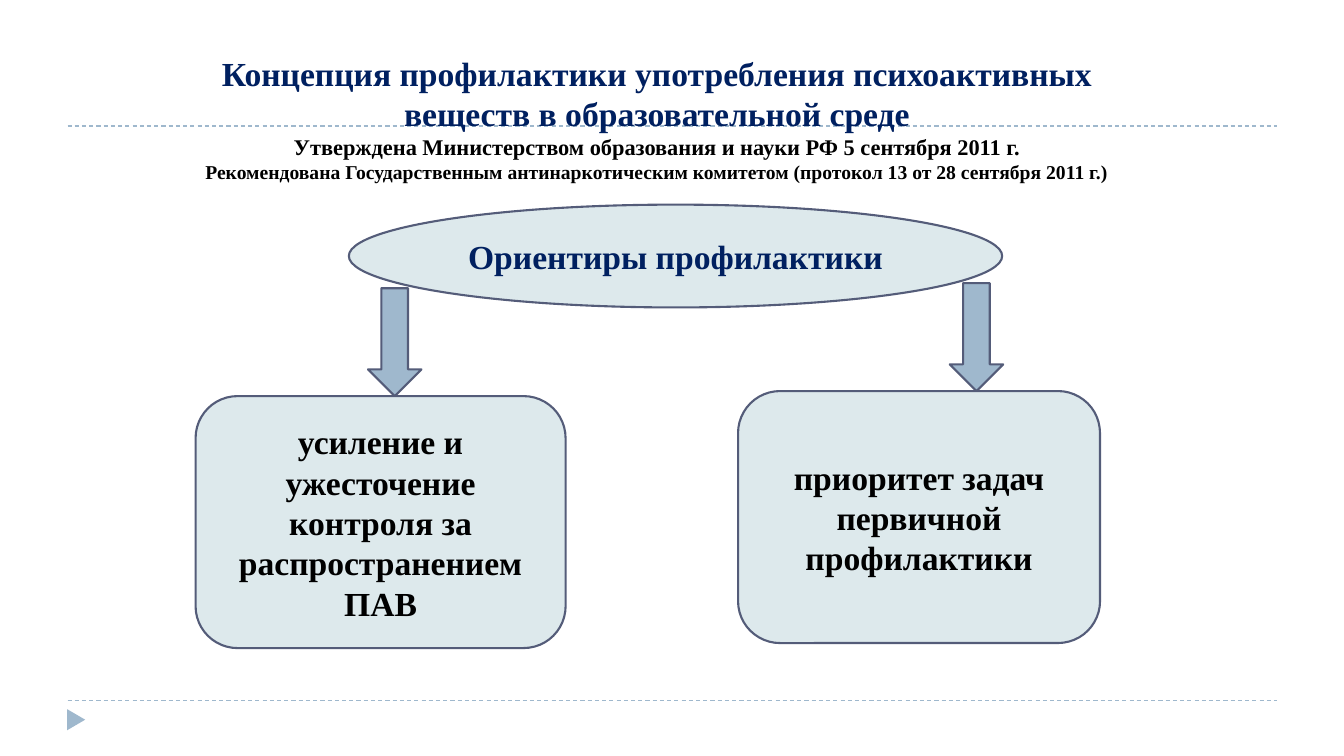
from dataclasses import dataclass

from lxml import etree
from pptx import Presentation
from pptx import util as u
from pptx.dml import color
from pptx.enum import dml, shapes, text
from pptx.oxml import ns

Kind = shapes.MSO_SHAPE


@dataclass
class Theme:
    font: str = "Times New Roman"
    navy: str = "002060"
    black: str = "000000"
    blue: str = "9FB8CD"
    pale: str = "DDE9EC"
    edge: str = "545C79"
    big: int = 24
    mid: int = 16
    small: int = 14
    thin: float = 0.75
    thick: float = 1.5


class Deck:
    def __init__(self, theme):
        self.theme = theme
        self.show = Presentation()
        self.show.slide_width = u.Inches(13.33)
        self.show.slide_height = u.Inches(7.5)
        self.slide = self.show.slides.add_slide(self.show.slide_layouts[5])

    def style(self, para, size, tint):
        para.alignment = text.PP_ALIGN.CENTER
        for run in para.runs:
            run.font.name = self.theme.font
            run.font.size = u.Pt(size)
            run.font.bold = True
            run.font.color.rgb = color.RGBColor.from_string(tint)

    def rule(self, top):
        left, right, y = u.Inches(0.67), u.Inches(12.67), u.Inches(top)
        line = self.slide.shapes.add_connector(
            shapes.MSO_CONNECTOR.STRAIGHT, left, y, right, y)
        line.line.color.rgb = color.RGBColor.from_string(self.theme.blue)
        line.line.width = u.Pt(self.theme.thin)
        line.line.dash_style = dml.MSO_LINE.DASH
        etree.SubElement(line._element.spPr, ns.qn("a:effectLst"))

    def shape(self, kind, box, fill, edge=None):
        item = self.slide.shapes.add_shape(kind, *map(u.Inches, box))
        item.shadow.inherit = False
        item.fill.solid()
        item.fill.fore_color.rgb = color.RGBColor.from_string(fill)
        if edge:
            item.line.color.rgb = color.RGBColor.from_string(edge)
            item.line.width = u.Pt(self.theme.thick)
        else:
            item.line.fill.background()
        return item

    def mark(self):
        item = self.shape(Kind.ISOSCELES_TRIANGLE, (0.65, 7.05, 0.21, 0.18),
                          self.theme.blue)
        item.rotation = 90

    def arrow(self, left, top):
        self.shape(Kind.DOWN_ARROW, (left, top, 0.53, 1.07),
                   self.theme.blue, self.theme.edge)

    def label(self, kind, box, words, tint):
        item = self.shape(kind, box, self.theme.pale, self.theme.edge)
        frame = item.text_frame
        frame.word_wrap = True
        frame.vertical_anchor = text.MSO_ANCHOR.MIDDLE
        frame.text = words
        self.style(frame.paragraphs[0], self.theme.big, tint)

    def title(self, box, lines):
        item = self.slide.shapes.title
        item.left, item.top, item.width, item.height = map(u.Inches, box)
        frame = item.text_frame
        frame.word_wrap = True
        frame.auto_size = text.MSO_AUTO_SIZE.NONE
        frame.vertical_anchor = text.MSO_ANCHOR.TOP
        frame.text = "\n".join(words for words, size, tint in lines)
        for para, (words, size, tint) in zip(frame.paragraphs, lines):
            self.style(para, size, tint)
        item._element.getparent().append(item._element)


def main():
    theme = Theme()
    deck = Deck(theme)
    for top in (6.95, 1.25):
        deck.rule(top)
    deck.mark()

    goals = (
        (1.94, 3.93, 3.67, 3.65,
         "усиление и ужесточение контроля за распространением ПАВ"),
        (7.32, 3.88, 3.59, 9.42, "приоритет задач первичной профилактики"),
    )
    for left, top, width, tip, words in goals:
        deck.arrow(tip, top - 1.07)
        deck.label(Kind.ROUNDED_RECTANGLE, (left, top, width, 2.5),
                   words, theme.black)
    deck.label(Kind.OVAL, (3.46, 2.03, 6.48, 1.02),
               "Ориентиры профилактики", theme.navy)

    deck.title((1.67, 0.47, 9.69, 1.75), (
        ("Концепция профилактики употребления психоактивных веществ "
         "в образовательной среде", theme.big, theme.navy),
        ("Утверждена Министерством образования и науки РФ "
         "5 сентября 2011 г.", theme.mid, theme.black),
        ("Рекомендована Государственным антинаркотическим комитетом "
         "(протокол 13 от 28 сентября 2011 г.)", theme.small, theme.black),
    ))
    deck.show.save("out.pptx")


if __name__ == "__main__":
    main()
